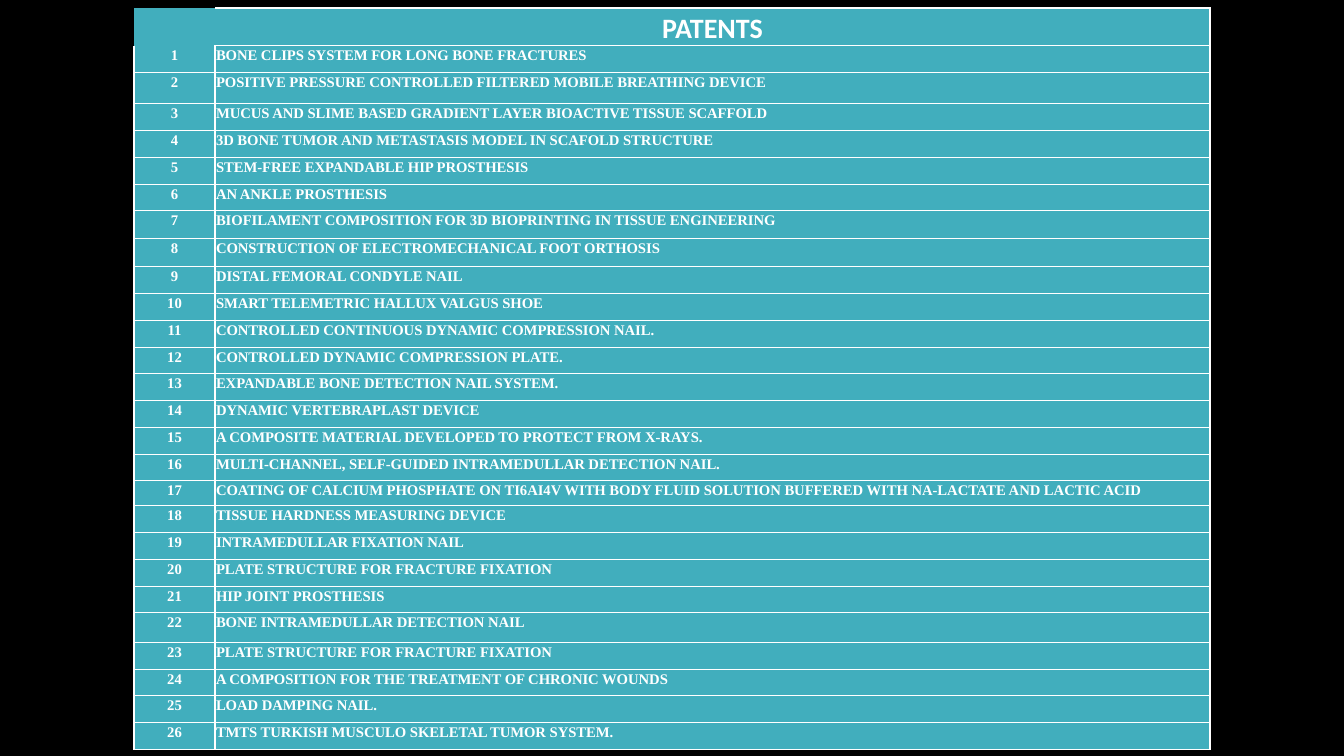
from dataclasses import dataclass

from lxml.etree import SubElement
from pptx import Presentation
from pptx.dml.color import RGBColor
from pptx.enum.text import MSO_ANCHOR, PP_ALIGN as Align
from pptx.oxml.ns import qn
from pptx.util import Emu, Pt

EMU_PER_PX = 914400 / 100.8
SLIDE_SIZE = (1344, 756)

COLUMN_WIDTHS = (81, 995)
HEADER_HEIGHT = 37
ROW_HEIGHT = 27
SPECIAL_HEIGHTS = {2: 31, 6: 26, 7: 28, 8: 28, 12: 26, 16: 26, 17: 25, 21: 26, 22: 30, 24: 26}

PATENTS = (
    "BONE CLIPS SYSTEM FOR LONG BONE FRACTURES",
    "POSITIVE PRESSURE CONTROLLED FILTERED MOBILE BREATHING DEVICE",
    "MUCUS AND SLIME BASED GRADIENT LAYER BIOACTIVE TISSUE SCAFFOLD",
    "3D BONE TUMOR AND METASTASIS MODEL IN SCAFOLD STRUCTURE",
    "STEM-FREE EXPANDABLE HIP PROSTHESIS",
    "AN ANKLE PROSTHESIS",
    "BIOFILAMENT COMPOSITION FOR 3D BIOPRINTING IN TISSUE ENGINEERING",
    "CONSTRUCTION OF ELECTROMECHANICAL FOOT ORTHOSIS",
    "DISTAL FEMORAL CONDYLE NAIL",
    "SMART TELEMETRIC HALLUX VALGUS SHOE",
    "CONTROLLED CONTINUOUS DYNAMIC COMPRESSION NAIL.",
    "CONTROLLED DYNAMIC COMPRESSION PLATE.",
    "EXPANDABLE BONE DETECTION NAIL SYSTEM.",
    "DYNAMIC VERTEBRAPLAST DEVICE",
    "A COMPOSITE MATERIAL DEVELOPED TO PROTECT FROM X-RAYS.",
    "MULTI-CHANNEL, SELF-GUIDED INTRAMEDULLAR DETECTION NAIL.",
    "COATING OF CALCIUM PHOSPHATE ON TI6AI4V WITH BODY FLUID SOLUTION BUFFERED WITH "
    "NA-LACTATE AND LACTIC ACID",
    "TISSUE HARDNESS MEASURING DEVICE",
    "INTRAMEDULLAR FIXATION NAIL",
    "PLATE STRUCTURE FOR FRACTURE FIXATION",
    "HIP JOINT PROSTHESIS",
    "BONE INTRAMEDULLAR DETECTION NAIL",
    "PLATE STRUCTURE FOR FRACTURE FIXATION",
    "A COMPOSITION FOR THE TREATMENT OF CHRONIC WOUNDS",
    "LOAD DAMPING NAIL.",
    "TMTS TURKISH MUSCULO SKELETAL TUMOR SYSTEM.",
)


@dataclass(frozen=True)
class Theme:
    background: str = "000000"
    cell: str = "41AEBD"
    ink: str = "FFFFFF"
    heading_font: str = "Calibri"
    body_font: str = "Times New Roman"
    heading_size: float = 20
    body_size: float = 10.5
    line_spacing: float = 1.07
    border_width: float = 1


def px(length):
    return Emu(round(length * EMU_PER_PX))


class SlideBuilder:
    def __init__(self, slide, theme):
        self.slide = slide
        self.theme = theme

    def background(self):
        fill = self.slide.background.fill
        fill.solid()
        fill.fore_color.rgb = RGBColor.from_string(self.theme.background)

    def table(self, left, top, widths, heights):
        frame = self.slide.shapes.add_table(
            len(heights), len(widths), px(left), px(top), px(sum(widths)), px(sum(heights)))
        table = frame.table
        table.first_row = table.horz_banding = False
        for column, width in zip(table.columns, widths):
            column.width = px(width)
        for row, height in zip(table.rows, heights):
            row.height = px(height)
        return table

    def borders(self, cell, sides):
        """Draw the named sides (of L, R, T, B) and clear the others."""
        properties = cell._tc.get_or_add_tcPr()
        for side in "LRTB":
            line = SubElement(properties, qn(f"a:ln{side}"), w=str(Pt(self.theme.border_width)))
            if side in sides:
                fill = SubElement(line, qn("a:solidFill"))
                SubElement(fill, qn("a:srgbClr"), val=self.theme.ink)
            else:
                SubElement(line, qn("a:noFill"))

    def cell(self, cell, text="", align=Align.LEFT, sides="LRTB", heading=False):
        theme = self.theme
        self.borders(cell, sides)
        cell.fill.solid()
        cell.fill.fore_color.rgb = RGBColor.from_string(theme.cell)
        cell.margin_left = cell.margin_right = cell.margin_top = px(1)
        cell.margin_bottom = 0
        cell.vertical_anchor = MSO_ANCHOR.TOP
        cell.text_frame.text = text
        paragraph = cell.text_frame.paragraphs[0]
        paragraph.alignment = align
        paragraph.line_spacing = theme.line_spacing
        for run in paragraph.runs:
            run.font.name = theme.heading_font if heading else theme.body_font
            run.font.size = Pt(theme.heading_size if heading else theme.body_size)
            run.font.bold = True
            run.font.color.rgb = RGBColor.from_string(theme.ink)


def main():
    presentation = Presentation()
    presentation.slide_width, presentation.slide_height = map(px, SLIDE_SIZE)
    slide = presentation.slides.add_slide(presentation.slide_layouts[6])
    builder = SlideBuilder(slide, Theme())
    builder.background()

    numbers = range(1, len(PATENTS) + 1)
    heights = [HEADER_HEIGHT] + [SPECIAL_HEIGHTS.get(number, ROW_HEIGHT) for number in numbers]
    table = builder.table(134, 8, COLUMN_WIDTHS, heights)
    builder.cell(table.cell(0, 0), sides="")
    builder.cell(table.cell(0, 1), "PATENTS", Align.CENTER, sides="RTB", heading=True)
    for number, patent in zip(numbers, PATENTS):
        number_sides = "LRB" if number == 1 else "LRTB"
        builder.cell(table.cell(number, 0), str(number), Align.CENTER, number_sides)
        builder.cell(table.cell(number, 1), patent)

    presentation.save("out.pptx")


if __name__ == "__main__":
    main()
